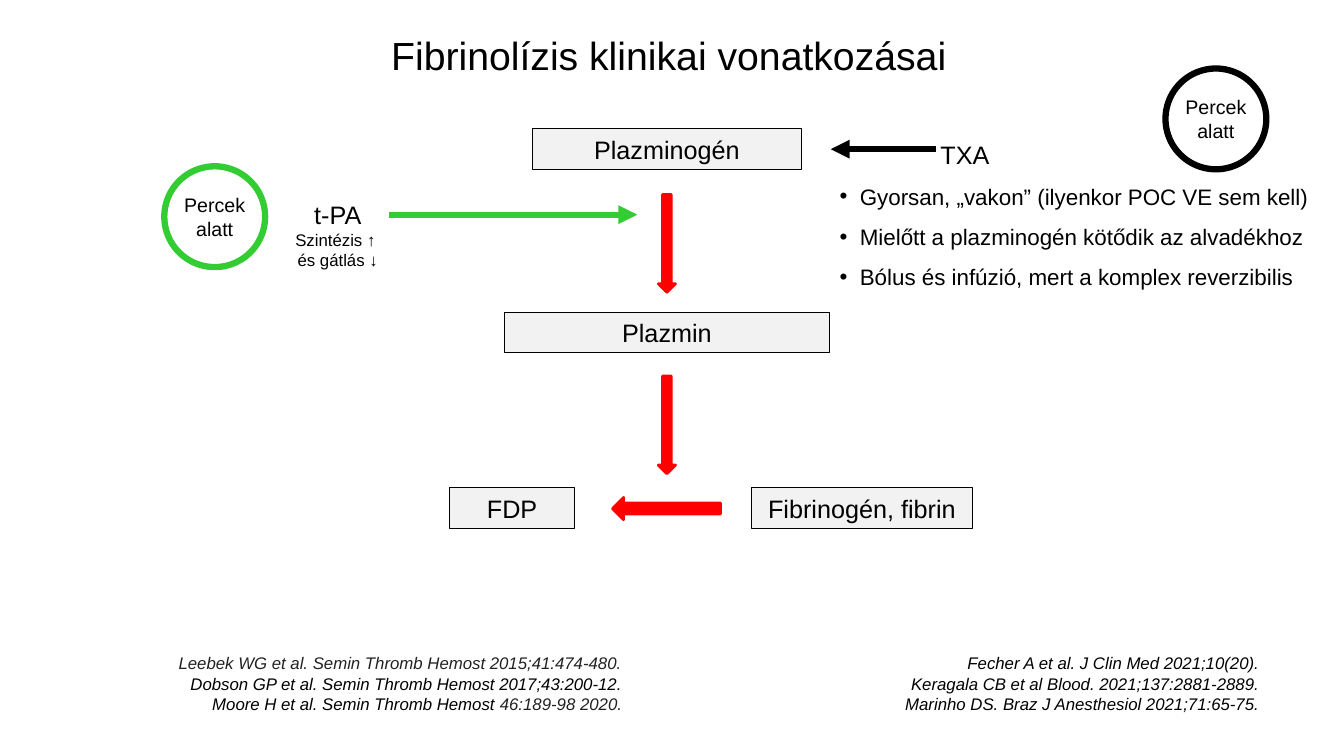
from lxml import etree
from pptx import Presentation
from pptx.dml.color import RGBColor
from pptx.enum.shapes import MSO_CONNECTOR, MSO_SHAPE
from pptx.enum.text import MSO_ANCHOR, PP_ALIGN
from pptx.oxml.ns import qn
from pptx.util import Inches, Pt

RECT, OVAL = MSO_SHAPE.RECTANGLE, MSO_SHAPE.OVAL
DOWN, LEFT_ARROW = MSO_SHAPE.DOWN_ARROW, MSO_SHAPE.LEFT_ARROW
STRAIGHT = MSO_CONNECTOR.STRAIGHT
LEFT, CENTER, RIGHT = PP_ALIGN.LEFT, PP_ALIGN.CENTER, PP_ALIGN.RIGHT
TOP, MIDDLE = MSO_ANCHOR.TOP, MSO_ANCHOR.MIDDLE

BLACK, DARK, GREY = "000000", "222222", "F2F2F2"
RED, GREEN = "FF0000", "33CC33"


def rgb(value):
    return RGBColor.from_string(value)


def grid(*cells):
    """Columns and rows of a square grid, ten to the inch."""
    return [Inches(c / 10) for c in cells]


class Board:
    font = "Arial"

    def __init__(self, prs):
        self.s = prs.slides.add_slide(prs.slide_layouts[5])

    def run(self, p, text, size, color=BLACK, italic=False):
        r = p.add_run()
        r.text = text
        f = r.font
        f.name, f.size, f.italic = self.font, Pt(size), italic
        f.color.rgb = rgb(color)

    def paragraphs(self, tf, lines, align=LEFT, italic=False):
        """Each line is a list of (text, size, color) runs."""
        for i, line in enumerate(lines):
            p = tf.paragraphs[0] if i == 0 else tf.add_paragraph()
            p.alignment = align
            for text, size, color in line:
                self.run(p, text, size, color, italic)

    def title(self, text, at):
        sp = self.s.shapes.title
        sp.left, sp.top, sp.width, sp.height = grid(*at)
        tf = sp.text_frame
        tf.word_wrap, tf.vertical_anchor = True, TOP
        self.paragraphs(tf, [[(text, 28, BLACK)]])

    def text(self, lines, at, align=LEFT, italic=False):
        tf = self.s.shapes.add_textbox(*grid(*at)).text_frame
        tf.word_wrap = True
        self.paragraphs(tf, lines, align, italic)
        return tf

    def shape(self, kind, at, line, weight, fill=None):
        sp = self.s.shapes.add_shape(kind, *grid(*at))
        sp.shadow.inherit = False
        if fill:
            sp.fill.solid()
            sp.fill.fore_color.rgb = rgb(fill)
        else:
            sp.fill.background()
        sp.line.color.rgb, sp.line.width = rgb(line), Pt(weight)
        return sp

    def label(self, sp, text, size):
        tf = sp.text_frame
        tf.word_wrap, tf.vertical_anchor = True, MIDDLE
        tf.margin_left = tf.margin_right = 0
        self.paragraphs(tf, [[(text, size, BLACK)]], CENTER)

    def box(self, text, left, top, width):
        self.label(self.shape(RECT, (left, top, width, 4), BLACK, 0.75, GREY), text, 18)

    def badge(self, text, left, top, color):
        self.label(self.shape(OVAL, (left, top, 10, 10), color, 4.5), text, 14)

    def block_arrow(self, kind, at):
        self.shape(kind, at, RED, 2, RED)

    def arrow(self, start, end, row, color):
        c = self.s.shapes.add_connector(STRAIGHT, *grid(start, row, end, row))
        c.line.color.rgb, c.line.width = rgb(color), Pt(4.5)
        ln = c.line._get_or_add_ln()
        etree.SubElement(ln, qn("a:tailEnd"), type="triangle")
        etree.SubElement(c._element.spPr, qn("a:effectLst"))

    def indent(self, p, margin, bullet=None):
        p.line_spacing = 1.5
        pPr = p._p.get_or_add_pPr()
        pPr.set("marL", str(Inches(margin)))
        if bullet:
            pPr.set("indent", str(-Inches(margin)))
            etree.SubElement(pPr, qn("a:buFont"), typeface=self.font)
            etree.SubElement(pPr, qn("a:buChar"), char=bullet)


def main():
    prs = Presentation()
    prs.slide_width, prs.slide_height = Inches(13.33), Inches(7.5)
    b = Board(prs)
    b.title("Fibrinolízis klinikai vonatkozásai", (37.8, 2.6, 57.8, 5.7))

    # Pathway boxes and red block arrows
    for name, left, top, width in [
        ("Plazminogén", 52.8, 12.8, 26.7),
        ("Plazmin", 50, 31, 32.3),
        ("FDP", 44.6, 48.4, 12.4),
        ("Fibrinogén, fibrin", 74.5, 48.4, 22),
    ]:
        b.box(name, left, top, width)
    for top in (19.3, 37.3):
        b.block_arrow(DOWN, (65.3, top, 1.7, 9.7))
    b.block_arrow(LEFT_ARROW, (60.75, 49.35, 10.7, 2.2))

    # Activator on the left
    b.text([[("t-PA", 18, BLACK)], [("Szintézis ↑ ", 12, BLACK)],
            [("és gátlás ↓", 12, BLACK)]], (28.1, 19.3, 10.8, 8.1), CENTER)
    b.arrow(38.6, 63.2, 21.3, GREEN)

    # Inhibitor on the right
    points = ["Gyorsan, „vakon” (ilyenkor POC VE sem kell)",
              "Mielőtt a plazminogén kötődik az alvadékhoz",
              "Bólus és infúzió, mert a komplex reverzibilis"]
    tf = b.text([[("TXA", 18, BLACK)]] + [[(t, 16, BLACK)] for t in points],
                (82.3, 11.8, 49, 17.2))
    b.indent(tf.paragraphs[0], 1)
    for p in tf.paragraphs[1:]:
        b.indent(p, 0.2, "•")
    b.arrow(92.8, 82.4, 14.8, BLACK)

    # Time badges
    b.badge("Percek alatt", 16.3, 16.5, GREEN)
    b.badge("Percek alatt", 115.6, 6.8, BLACK)

    # References
    b.text([[("Leebek WG et al. Semin Thromb Hemost 2015;41:474-480.", 12, DARK)],
            [("Dobson GP et al. Semin Thromb Hemost 2017;43:200-12.", 12, BLACK)],
            [("Moore H et al. Semin Thromb Hemost ", 12, BLACK),
             ("46:189-98 2020.", 12, DARK)]],
           (16.3, 64.3, 46.4, 7.1), RIGHT, True)
    b.text([[(t, 12, BLACK)] for t in (
        "Fecher A et al. J Clin Med 2021;10(20).",
        "Keragala CB et al Blood. 2021;137:2881-2889.",
        "Marinho DS. Braz J Anesthesiol 2021;71:65-75.")],
        (88.5, 64.3, 37.4, 7.1), RIGHT, True)

    prs.save("out.pptx")


if __name__ == "__main__":
    main()
